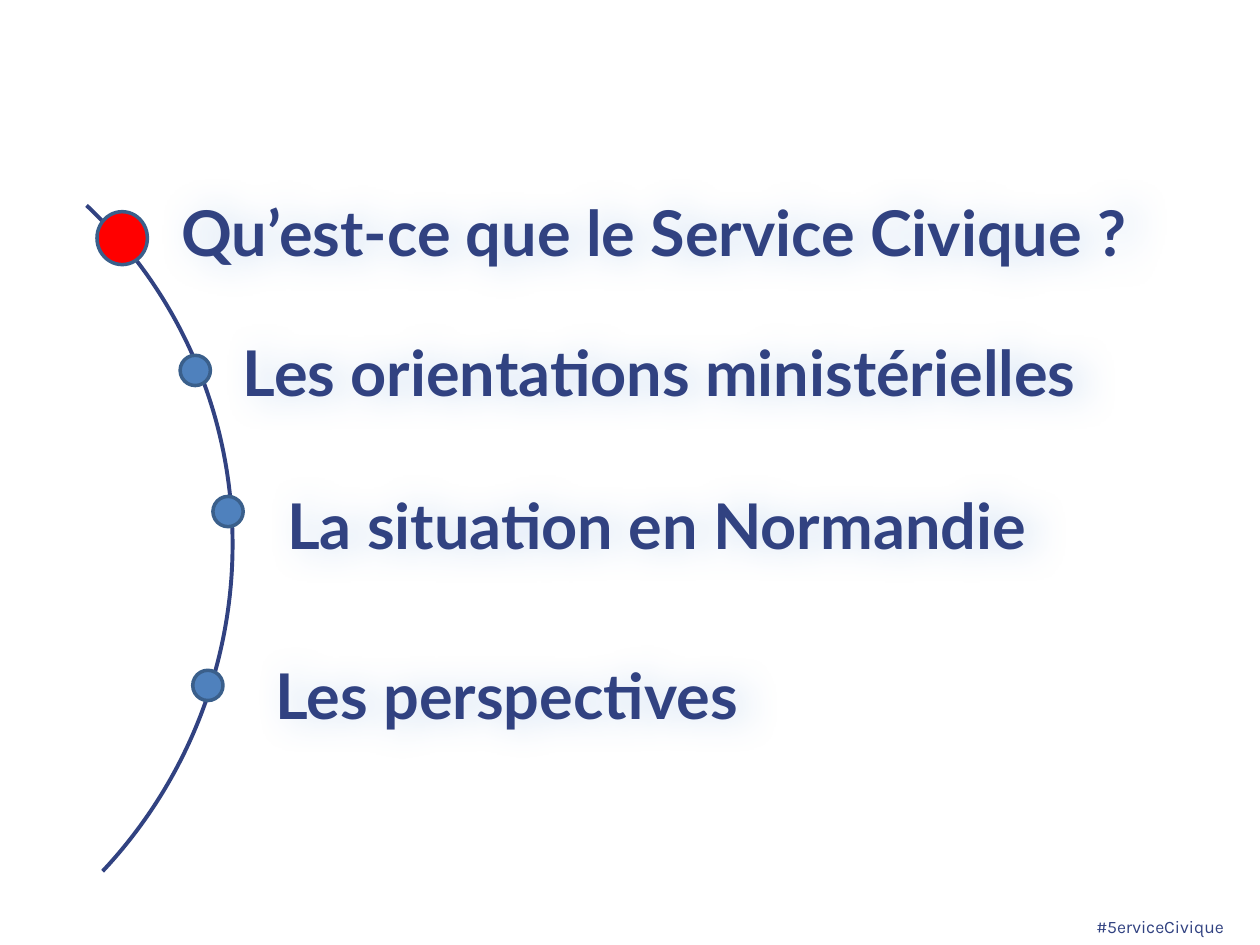
from lxml import etree
from pptx import Presentation
from pptx.dml.color import RGBColor
from pptx.enum.shapes import MSO_SHAPE
from pptx.enum.text import MSO_ANCHOR, PP_ALIGN
from pptx.oxml.ns import qn
from pptx.util import Inches, Pt

ARC, OVAL = MSO_SHAPE.ARC, MSO_SHAPE.OVAL
TOP = MSO_ANCHOR.TOP
LEFT, RIGHT = PP_ALIGN.LEFT, PP_ALIGN.RIGHT

COLORS = {"navy": "314281", "blue": "4F81BD", "outline": "3A5F8B",
          "red": "FF0000", "glow": "8EB4E3"}


def rgb(name):
    return RGBColor.from_string(COLORS[name])


def add_text(slide, box, text, font, size, bold, align):
    sp = slide.shapes.add_textbox(*map(Inches, box))
    tf = sp.text_frame
    tf.word_wrap = True
    tf.vertical_anchor = TOP
    p = tf.paragraphs[0]
    p.alignment = align
    r = p.add_run()
    r.text = text
    r.font.name = font
    r.font.size = Pt(size)
    r.font.bold = bold
    r.font.color.rgb = rgb("navy")
    return sp


prs = Presentation()
prs.slide_width, prs.slide_height = Inches(10), Inches(7.5)
s = prs.slides.add_slide(prs.slide_layouts[6])

# Hashtag at the foot
add_text(s, (7.76, 7.22, 2.05, 0.27), "#5erviceCivique", "Karla", 10, False, RIGHT)

# Quarter-circle timeline
arc = s.shapes.add_shape(ARC, Inches(-5.6), Inches(0.61), Inches(7.42), Inches(7.53))
arc.rotation = 43.2
arc.shadow.inherit = False
arc.fill.background()
arc.line.color.rgb = rgb("navy")
arc.line.width = Pt(2.25)

# Agenda: text, text left/top/width, marker left/top/width/height, marker colour
items = [
    ("Qu’est-ce que le Service Civique ?", (1.34, 1.49, 8.58), (0.77, 1.68, 0.4, 0.42), "red"),
    ("Les orientations ministérielles", (1.83, 2.6, 7.42), (1.43, 2.82, 0.24, 0.24), "blue"),
    ("La situation en Normandie", (2.18, 3.81, 6.65), (1.69, 3.94, 0.24, 0.24), "blue"),
    ("Les perspectives", (2.09, 5.16, 4.29), (1.53, 5.32, 0.24, 0.24), "blue"),
]
for text, place, marker, color in items:
    dot = s.shapes.add_shape(OVAL, *map(Inches, marker))
    dot.shadow.inherit = False
    dot.fill.solid()
    dot.fill.fore_color.rgb = rgb(color)
    dot.line.color.rgb = rgb("outline")
    dot.line.width = Pt(2)

    sp = add_text(s, (*place, 0.61), text, "Lato", 36, True, LEFT)

    # Soft blue shadow behind the letters
    effects = etree.SubElement(sp.element.spPr, qn("a:effectLst"))
    shadow = etree.SubElement(effects, qn("a:outerShdw"), blurRad=str(Pt(20)),
                              dist=str(Pt(6)), dir="60000", rotWithShape="0")
    glow = etree.SubElement(shadow, qn("a:srgbClr"), val=COLORS["glow"])
    etree.SubElement(glow, qn("a:alpha"), val="45000")

prs.save("out.pptx")
